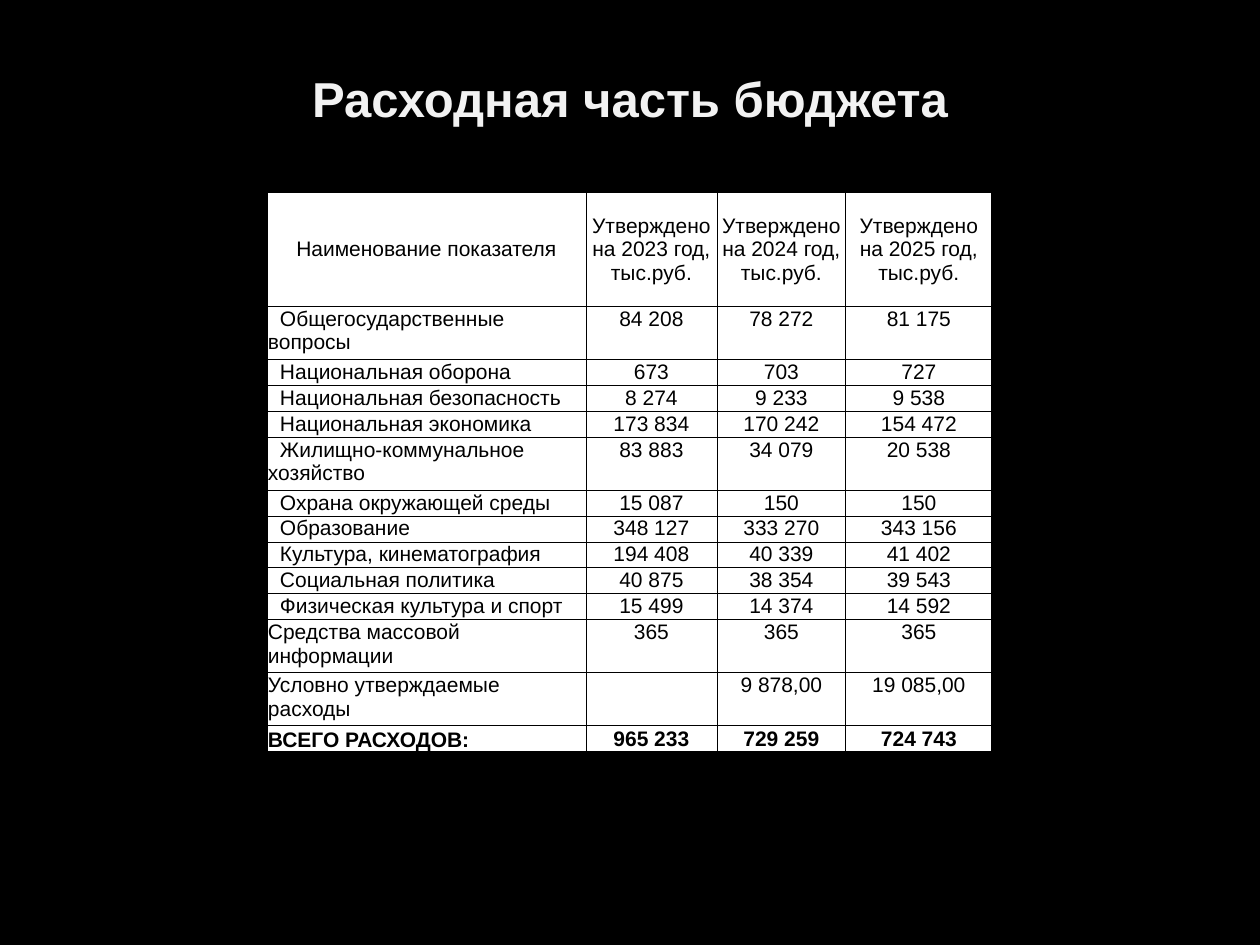
"""Build the slide with the table of budget expenditure."""
import lxml.etree
import pptx
import pptx.dml.color
import pptx.enum.text
import pptx.oxml.ns
import pptx.util

PX = 914400 // 126
BLACK = pptx.dml.color.RGBColor(0x00, 0x00, 0x00)
WHITE = pptx.dml.color.RGBColor(0xFF, 0xFF, 0xFF)
PALE = pptx.dml.color.RGBColor(0xF2, 0xF2, 0xF2)
ALIGN = pptx.enum.text.PP_ALIGN
ANCHOR = pptx.enum.text.MSO_ANCHOR

COLS = [319, 131, 129, 146]
HEAD, LINE, PAIR = 114, 26, 53
INDENT = 12
YEARS = [2023, 2024, 2025]
ITEMS = [
    ("Общегосударственные вопросы", "84 208", "78 272", "81 175"),
    ("Национальная оборона", "673", "703", "727"),
    ("Национальная безопасность", "8 274", "9 233", "9 538"),
    ("Национальная экономика", "173 834", "170 242", "154 472"),
    ("Жилищно-коммунальное хозяйство", "83 883", "34 079", "20 538"),
    ("Охрана окружающей среды", "15 087", "150", "150"),
    ("Образование", "348 127", "333 270", "343 156"),
    ("Культура, кинематография", "194 408", "40 339", "41 402"),
    ("Социальная политика", "40 875", "38 354", "39 543"),
    ("Физическая культура и спорт", "15 499", "14 374", "14 592"),
]
OTHER = [
    ("Средства массовой информации", "365", "365", "365"),
    ("Условно утверждаемые расходы", "", "9 878,00", "19 085,00"),
]
TOTAL = ("ВСЕГО РАСХОДОВ:", "965 233", "729 259", "724 743")
TALL = {ITEMS[0], ITEMS[4], *OTHER}


def px(num):
    """Turn pixels into EMU."""
    return pptx.util.Emu(num * PX)


def apply(thing, form):
    """Set each value of a format on an object."""
    for name, value in form.items():
        setattr(thing, name, value)


def write(frame, text, size, color, bold, align):
    """Put one formatted paragraph into a text frame."""
    para = frame.paragraphs[0]
    para.alignment = align
    run = para.add_run()
    run.text = text
    apply(run.font, {"name": "Arial", "size": pptx.util.Pt(size), "bold": bold})
    run.font.color.rgb = color
    return para


def border(cell):
    """Draw thin black lines on all four sides of a cell."""
    props = cell._tc.get_or_add_tcPr()
    qn = pptx.oxml.ns.qn
    for side in "LRTB":
        line = lxml.etree.SubElement(props, qn(f"a:ln{side}"), w=str(pptx.util.Pt(0.5)))
        fill = lxml.etree.SubElement(line, qn("a:solidFill"))
        lxml.etree.SubElement(fill, qn("a:srgbClr"), val=str(BLACK))


def fill_cell(cell, text, align, anchor, bold, indent):
    """Format a table cell and write its text."""
    border(cell)
    cell.fill.solid()
    cell.fill.fore_color.rgb = WHITE
    apply(cell, {
        "margin_left": px(1), "margin_top": px(1), "margin_right": px(1),
        "margin_bottom": 0, "vertical_anchor": anchor,
    })
    if text:
        para = write(cell.text_frame, text, 12, BLACK, bold, align)
        if indent:
            para._p.get_or_add_pPr().set("indent", str(px(INDENT)))


def add_title(slide, text):
    """Place and format the slide title."""
    title = slide.shapes.title
    apply(title, {"left": px(63), "top": px(37), "width": px(1134), "height": px(121)})
    title.text_frame.vertical_anchor = ANCHOR.MIDDLE
    write(title.text_frame, text, 28, PALE, True, ALIGN.CENTER)


def add_grid(slide, left, top):
    """Add the table of expenditure by year."""
    head = ("Наименование показателя",
            *(f"Утверждено на {year} год, тыс.руб." for year in YEARS))
    rows = [head, *ITEMS, *OTHER, TOTAL]
    sizes = [HEAD] + [PAIR if row in TALL else LINE for row in rows[1:]]
    grid = slide.shapes.add_table(
        len(rows), len(COLS), px(left), px(top), px(sum(COLS)), px(sum(sizes))).table
    apply(grid, {"first_row": False, "horz_banding": False})
    for col, width in zip(grid.columns, COLS):
        col.width = px(width)
    for y, (row, size) in enumerate(zip(rows, sizes)):
        grid.rows[y].height = px(size)
        for x, text in enumerate(row):
            label = x == 0 and row is not head
            anchor = ANCHOR.MIDDLE if row in (head, TOTAL) else ANCHOR.TOP
            if label and row is TOTAL:
                anchor = ANCHOR.BOTTOM
            align = ALIGN.LEFT if label else ALIGN.CENTER
            fill_cell(grid.cell(y, x), text, align, anchor,
                      row is TOTAL, label and row in ITEMS)


def main():
    """Build and save the slide."""
    deck = pptx.Presentation()
    apply(deck, {"slide_width": px(1260), "slide_height": px(945)})
    slide = deck.slides.add_slide(deck.slide_layouts[5])
    slide.background.fill.solid()
    slide.background.fill.fore_color.rgb = BLACK
    add_title(slide, "Расходная часть бюджета")
    add_grid(slide, 267, 192)
    deck.save("out.pptx")


if __name__ == "__main__":
    main()
